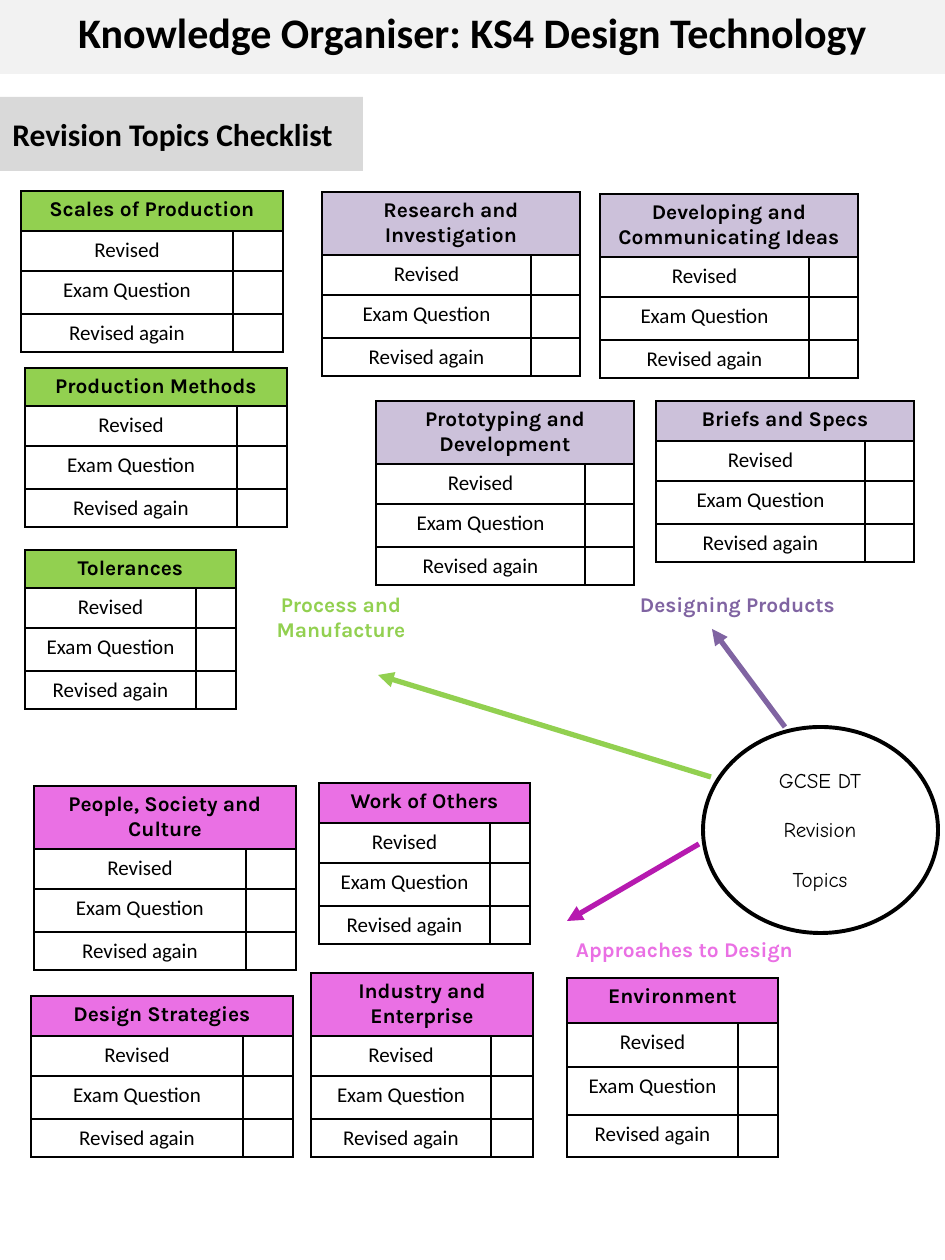
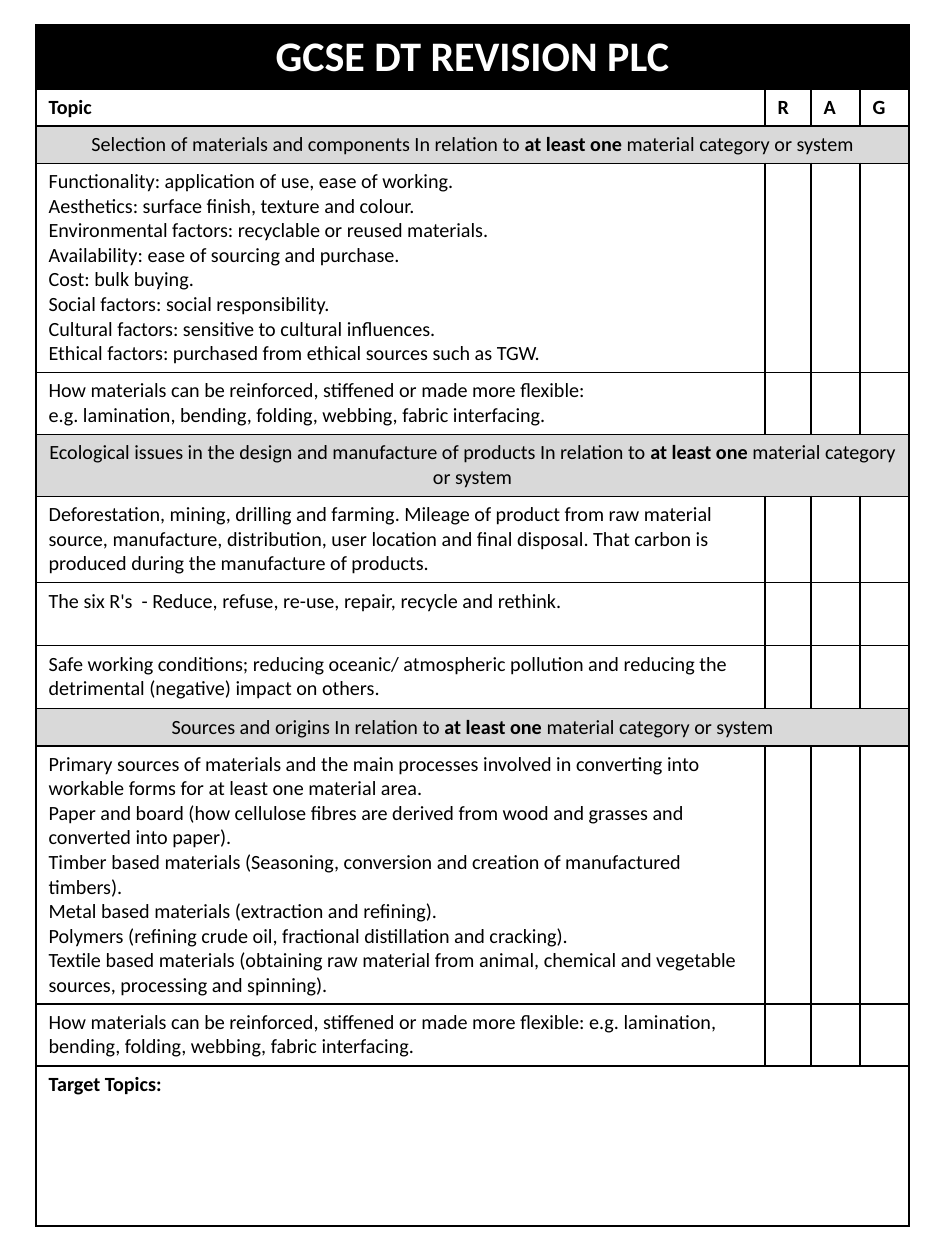
from lxml import etree
from pptx import Presentation
from pptx.dml.color import RGBColor
from pptx.enum.shapes import MSO_CONNECTOR, MSO_SHAPE
from pptx.enum.text import MSO_ANCHOR, MSO_AUTO_SIZE, PP_ALIGN
from pptx.oxml.ns import qn
from pptx.util import Pt

LEFT, CENTER = PP_ALIGN.LEFT, PP_ALIGN.CENTER
TOP, MIDDLE = MSO_ANCHOR.TOP, MSO_ANCHOR.MIDDLE
RECTANGLE, OVAL = MSO_SHAPE.RECTANGLE, MSO_SHAPE.OVAL
STRAIGHT = MSO_CONNECTOR.STRAIGHT
NO_AUTOFIT = MSO_AUTO_SIZE.NONE
PIXELS_PER_INCH = 126
TITLE_ONLY, BLANK = 5, 6

BLACK, WHITE = "000000", "FFFFFF"
BAND, GREY = "F2F2F2", "D9D9D9"
GREEN, PINK, MAGENTA = "92D050", "EA70E4", "B61AAF"
LILAC, PURPLE = "CCC1DA", "8064A2"
rgb = RGBColor.from_string


def px(*lengths):
    """Turn pixels into EMU."""
    return [round(length * 914400 / PIXELS_PER_INCH) for length in lengths]


def write_text(frame, text, size=12, font="Calibri", color=BLACK, bold=False,
               align=CENTER, anchor=TOP, gap=0):
    """Write one paragraph per line; **marks** switch to bold."""
    frame.word_wrap = True
    frame.vertical_anchor = anchor
    for number, line in enumerate(text.split("\n")):
        paragraph = frame.add_paragraph() if number else frame.paragraphs[0]
        paragraph.alignment = align
        paragraph.space_before = Pt(gap if number else 0)
        if not line:
            etree.SubElement(paragraph._p, qn("a:endParaRPr"), sz=str(int(size * 100)))
            continue
        for index, part in enumerate(line.split("**")):
            run = paragraph.add_run()
            run.text = part
            run.font.size = Pt(size)
            run.font.name = font
            run.font.bold = bold or index % 2 == 1
            run.font.color.rgb = rgb(color)


presentation = Presentation()
presentation.slide_width, presentation.slide_height = px(945, 1260)
checklist_slide = presentation.slides.add_slide(presentation.slide_layouts[TITLE_ONLY])
plc_slide = presentation.slides.add_slide(presentation.slide_layouts[BLANK])
shapes = checklist_slide.shapes

# Headings
title = shapes.title
title.left, title.top, title.width, title.height = px(0, 0, 945, 74)
title.fill.solid()
title.fill.fore_color.rgb = rgb(BAND)
title.text_frame.auto_size = NO_AUTOFIT
write_text(title.text_frame, "Knowledge Organiser: KS4 Design Technology", size=24, bold=True)

subtitle = shapes.add_shape(RECTANGLE, *px(0, 97, 363, 74))
subtitle.shadow.inherit = False
subtitle.fill.solid()
subtitle.fill.fore_color.rgb = rgb(GREY)
subtitle.line.fill.background()
write_text(subtitle.text_frame, "Revision Topics Checklist", size=18, bold=True,
           align=LEFT, anchor=MIDDLE)

# Hub with an arrow to each group of topics
hub = shapes.add_shape(OVAL, *px(703, 727, 235, 206))
hub.shadow.inherit = False
hub.fill.background()
hub.line.color.rgb = rgb(BLACK)
hub.line.width = Pt(2.25)
hub_text = shapes.add_textbox(*px(667, 761, 306, 140))
write_text(hub_text.text_frame, "GCSE DT\nRevision\nTopics", font="Comic Neue", gap=14)

arrows = [
    (MAGENTA, (699, 844, 567, 921)),
    (GREEN, (711, 777, 378, 675)),
    (PURPLE, (785, 727, 712, 629)),
]
for color, ends in arrows:
    arrow = shapes.add_connector(STRAIGHT, *px(*ends))
    arrow.line.color.rgb = rgb(color)
    arrow.line.width = Pt(3)
    etree.SubElement(arrow.line._get_or_add_ln(), qn("a:tailEnd"), type="triangle")
    etree.SubElement(arrow._element.spPr, qn("a:effectLst"))

group_labels = [
    ("Approaches to Design", PINK, (544, 930, 281, 38)),
    ("Process and Manufacture", GREEN, (208, 585, 266, 63)),
    ("Designing Products", PURPLE, (622, 585, 231, 38)),
]
for text, color, box in group_labels:
    label = shapes.add_textbox(*px(*box))
    write_text(label.text_frame, text, font="Karla", color=color, bold=True)

# Checklists: title, left, top, width, row heights
SLIM = (38, 40, 43, 38)
ONE_LINE = (40, 40, 43, 38)
TWO_LINES = (63, 40, 43, 38)
TALL = (45, 44, 48, 42)
STEPS = ["Revised", "Exam Question", "Revised again"]
checklists = {
    GREEN: [
        ("Scales of Production", 21, 191, 262, ONE_LINE),
        ("Production Methods", 25, 368, 262, SLIM),
        ("Tolerances", 25, 550, 211, SLIM),
    ],
    LILAC: [
        ("Research and Investigation", 322, 192, 258, TWO_LINES),
        ("Developing and Communicating Ideas", 600, 194, 258, TWO_LINES),
        ("Prototyping and Development", 376, 401, 258, TWO_LINES),
        ("Briefs and Specs", 656, 401, 258, ONE_LINE),
    ],
    PINK: [
        ("People, Society and Culture", 34, 786, 262, TWO_LINES),
        ("Work of Others", 319, 783, 211, ONE_LINE),
        ("Design Strategies", 31, 996, 262, ONE_LINE),
        ("Industry and Enterprise", 311, 973, 222, TWO_LINES),
        ("Environment", 567, 978, 211, TALL),
    ],
}

# Every table: slide, left, top, column widths, rows of (height, texts, fill, format).
# A row with a single text spans all columns.
tables = []
for color, group in checklists.items():
    for name, left, top, width, heights in group:
        step_width = round(width * 0.81)
        rows = [(heights[0], [name], color, {"font": "Karla", "bold": True})]
        rows += [(height, [step, ""], WHITE, {}) for height, step in zip(heights[1:], STEPS)]
        tables.append((checklist_slide, left, top, (step_width, width - step_width), rows))

SCOPE = "In relation to **at least one** material category or system"
TOPIC = {"size": 11.5, "align": LEFT}
SECTION = {"size": 11.5}
UNRATED = [""] * 3
plc_rows = [
    (63, ["GCSE DT REVISION PLC"], BLACK, {"size": 24, "color": WHITE, "bold": True}),
    (37, ["Topic", "R", "A", "G"], WHITE, {**TOPIC, "bold": True}),
    (37, [f"Selection of materials and components {SCOPE}"], GREY, SECTION),
    (209, ["Functionality: application of use, ease of working.\n"
           "Aesthetics: surface finish, texture and colour.\n"
           "Environmental factors: recyclable or reused materials.\n"
           "Availability: ease of sourcing and purchase.\n"
           "Cost: bulk buying.\n"
           "Social factors: social responsibility.\n"
           "Cultural factors: sensitive to cultural influences.\n"
           "Ethical factors: purchased from ethical sources such as TGW.", *UNRATED], WHITE, TOPIC),
    (62, ["How materials can be reinforced, stiffened or made more flexible:\n"
          "e.g. lamination, bending, folding, webbing, fabric interfacing.", *UNRATED], WHITE, TOPIC),
    (62, [f"Ecological issues in the design and manufacture of products {SCOPE}"], GREY, SECTION),
    (86, ["Deforestation, mining, drilling and farming. Mileage of product from raw material "
          "source, manufacture, distribution, user location and final disposal. That carbon is "
          "produced during the manufacture of products.", *UNRATED], WHITE, TOPIC),
    (63, ["The six R's  - Reduce, refuse, re-use, repair, recycle and rethink.", *UNRATED],
     WHITE, TOPIC),
    (63, ["Safe working conditions; reducing oceanic/ atmospheric pollution and reducing the "
          "detrimental (negative) impact on others.", *UNRATED], WHITE, TOPIC),
    (37, [f"Sources and origins {SCOPE}"], GREY, SECTION),
    (258, ["Primary sources of materials and the main processes involved in converting into "
           "workable forms for at least one material area.\n"
           "Paper and board (how cellulose fibres are derived from wood and grasses and "
           "converted into paper).\n"
           "Timber based materials (Seasoning, conversion and creation of manufactured timbers).\n"
           "Metal based materials (extraction and refining).\n"
           "Polymers (refining crude oil, fractional distillation and cracking).\n"
           "Textile based materials (obtaining raw material from animal, chemical and vegetable "
           "sources, processing and spinning).", *UNRATED], WHITE, TOPIC),
    (62, ["How materials can be reinforced, stiffened or made more flexible: e.g. lamination, "
          "bending, folding, webbing, fabric interfacing.", *UNRATED], WHITE, TOPIC),
    (160, ["Target Topics:"], WHITE, {**TOPIC, "bold": True}),
]
tables.append((plc_slide, 36, 25, (729, 46, 49, 49), plc_rows))

for slide, left, top, widths, rows in tables:
    total_height = sum(row[0] for row in rows)
    table = slide.shapes.add_table(len(rows), len(widths),
                                   *px(left, top, sum(widths), total_height)).table
    for column, width in zip(table.columns, px(*widths)):
        column.width = width
    for row_index, (height, texts, fill, text_format) in enumerate(rows):
        row = table.rows[row_index]
        row.height = px(height)[0]
        if len(texts) == 1:
            row.cells[0].merge(table.cell(row_index, len(widths) - 1))
        padded_texts = texts + [""] * (len(widths) - len(texts))
        for column_index, text in enumerate(padded_texts):
            cell = table.cell(row_index, column_index)
            properties = cell._tc.get_or_add_tcPr()
            for side in ("lnL", "lnR", "lnT", "lnB"):
                border = etree.SubElement(properties, qn(f"a:{side}"), w=str(Pt(1)))
                border_fill = etree.SubElement(border, qn("a:solidFill"))
                etree.SubElement(border_fill, qn("a:srgbClr"), val=BLACK)
            cell.fill.solid()
            cell.fill.fore_color.rgb = rgb(fill)
            write_text(cell.text_frame, text, **text_format)

presentation.save("out.pptx")
